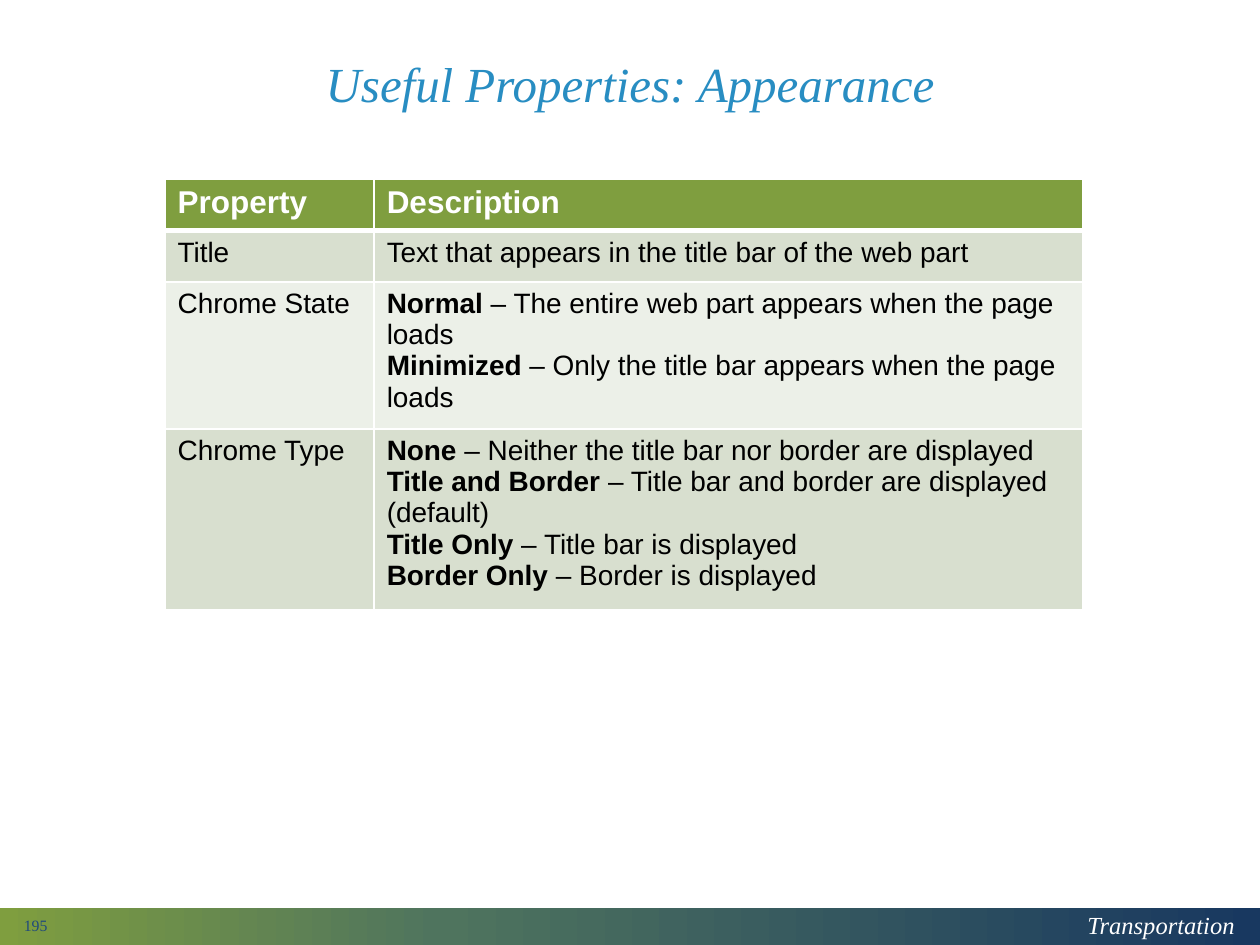
from copy import deepcopy
from dataclasses import dataclass

from lxml import etree
from pptx import Presentation
from pptx.dml.color import RGBColor
from pptx.enum.shapes import MSO_SHAPE
from pptx.enum.text import MSO_ANCHOR, PP_ALIGN
from pptx.oxml.ns import qn
from pptx.util import Inches, Pt

RECT = MSO_SHAPE.RECTANGLE
MIDDLE = MSO_ANCHOR.MIDDLE
LEFT, CENTER = PP_ALIGN.LEFT, PP_ALIGN.CENTER


@dataclass(frozen=True)
class Theme:
    serif: str = "Times New Roman"
    sans: str = "Arial"
    white: str = "FFFFFF"
    black: str = "000000"
    blue: str = "288DC2"
    navy: str = "1F497D"
    green: str = "7F9E3F"
    bands: tuple = ("D8DFCF", "ECF0E8")
    gradient: tuple = ((0, "7F9E3F"), (0.35, "4F745E"), (1, "183860"))
    title_size: int = 28
    header_size: int = 18
    body_size: int = 16
    footer_size: int = 14
    number_size: int = 9


T = Theme()

COLUMNS = (1.66, 5.62)
ROW_HEIGHTS = (0.41, 0.41, 1.08, 1.32)
HEADER = ("Property", "Description")
PROPERTIES = (
    ("Title", (("", "Text that appears in the title bar of the web part"),)),
    ("Chrome State", (
        ("Normal", " – The entire web part appears when the page loads"),
        ("Minimized", " – Only the title bar appears when the page loads"),
    )),
    ("Chrome Type", (
        ("None", " – Neither the title bar nor border are displayed"),
        ("Title and Border", " – Title bar and border are displayed (default)"),
        ("Title Only", " – Title bar is displayed"),
        ("Border Only", " – Border is displayed"),
    )),
)


def style_run(r, font, size, color, bold=False, italic=False):
    r.font.name = font
    r.font.size = Pt(size)
    r.font.color.rgb = RGBColor.from_string(color)
    r.font.bold = bold
    r.font.italic = italic


def place(sp, left, top, width, height):
    sp.left, sp.top = Inches(left), Inches(top)
    sp.width, sp.height = Inches(width), Inches(height)


def add_title(s, text):
    sp = s.shapes.title
    place(sp, 0.69, 0.11, 8.62, 1.16)
    tf = sp.text_frame
    tf.text = text
    tf.vertical_anchor = MIDDLE
    p = tf.paragraphs[0]
    p.alignment = CENTER
    p.line_spacing = 0.9
    style_run(p.runs[0], T.serif, T.title_size, T.blue, italic=True)


def add_footer_band(s):
    sp = s.shapes.add_shape(RECT, 0, Inches(7.21), Inches(10), Inches(0.3))
    sp.shadow.inherit = False
    sp.line.fill.background()
    fill = sp.fill
    fill.gradient()
    fill.gradient_angle = 0
    stops = sp._element.spPr.find(qn("a:gradFill")).find(qn("a:gsLst"))
    stops.insert(1, deepcopy(stops[0]))
    for stop, (position, color) in zip(fill.gradient_stops, T.gradient):
        stop.position = position
        stop.color.rgb = RGBColor.from_string(color)


def add_label(s, text, box, size, color, align=LEFT, italic=False):
    sp = s.shapes.add_textbox(*map(Inches, box))
    tf = sp.text_frame
    tf.text = text
    tf.word_wrap = True
    tf.vertical_anchor = MIDDLE
    p = tf.paragraphs[0]
    p.alignment = align
    style_run(p.runs[0], T.serif, size, color, italic=italic)


def set_borders(cell, bottom=1):
    tc_pr = cell._tc.get_or_add_tcPr()
    for side, width in (("L", 1), ("R", 1), ("T", 1), ("B", bottom)):
        ln = etree.SubElement(tc_pr, qn(f"a:ln{side}"), w=str(Pt(width)))
        fill = etree.SubElement(ln, qn("a:solidFill"))
        etree.SubElement(fill, qn("a:srgbClr"), val=T.white)


def fill_cell(cell, lines, size, color, background, bold=False, bottom=1):
    set_borders(cell, bottom)
    cell.fill.solid()
    cell.fill.fore_color.rgb = RGBColor.from_string(background)
    tf = cell.text_frame
    for i, (lead, rest) in enumerate(lines):
        p = tf.add_paragraph() if i else tf.paragraphs[0]
        for text, strong in ((lead, True), (rest, bold)):
            if text:
                r = p.add_run()
                r.text = text
                style_run(r, T.sans, size, color, bold=strong)


def add_property_table(s):
    frame = s.shapes.add_table(
        len(ROW_HEIGHTS), len(COLUMNS), Inches(1.31), Inches(1.42),
        Inches(sum(COLUMNS)), Inches(sum(ROW_HEIGHTS)))
    table = frame.table
    for column, width in zip(table.columns, COLUMNS):
        column.width = Inches(width)
    for row, height in zip(table.rows, ROW_HEIGHTS):
        row.height = Inches(height)
    for c, text in enumerate(HEADER):
        fill_cell(table.cell(0, c), [("", text)], T.header_size, T.white,
                  T.green, bold=True, bottom=3)
    for i, (name, description) in enumerate(PROPERTIES):
        band = T.bands[i % 2]
        for c, lines in enumerate(([("", name)], description)):
            fill_cell(table.cell(i + 1, c), lines, T.body_size, T.black, band)


def main():
    prs = Presentation()
    prs.slide_width, prs.slide_height = Inches(10), Inches(7.5)
    s = prs.slides.add_slide(prs.slide_layouts[5])
    add_footer_band(s)
    add_label(s, "Transportation", (8.51, 7.17, 1.41, 0.34),
              T.footer_size, T.white, CENTER, italic=True)
    add_title(s, "Useful Properties: Appearance")
    add_label(s, "195", (0.09, 7.27, 2.25, 0.15), T.number_size, T.navy)
    add_property_table(s)
    prs.save("out.pptx")


if __name__ == "__main__":
    main()
